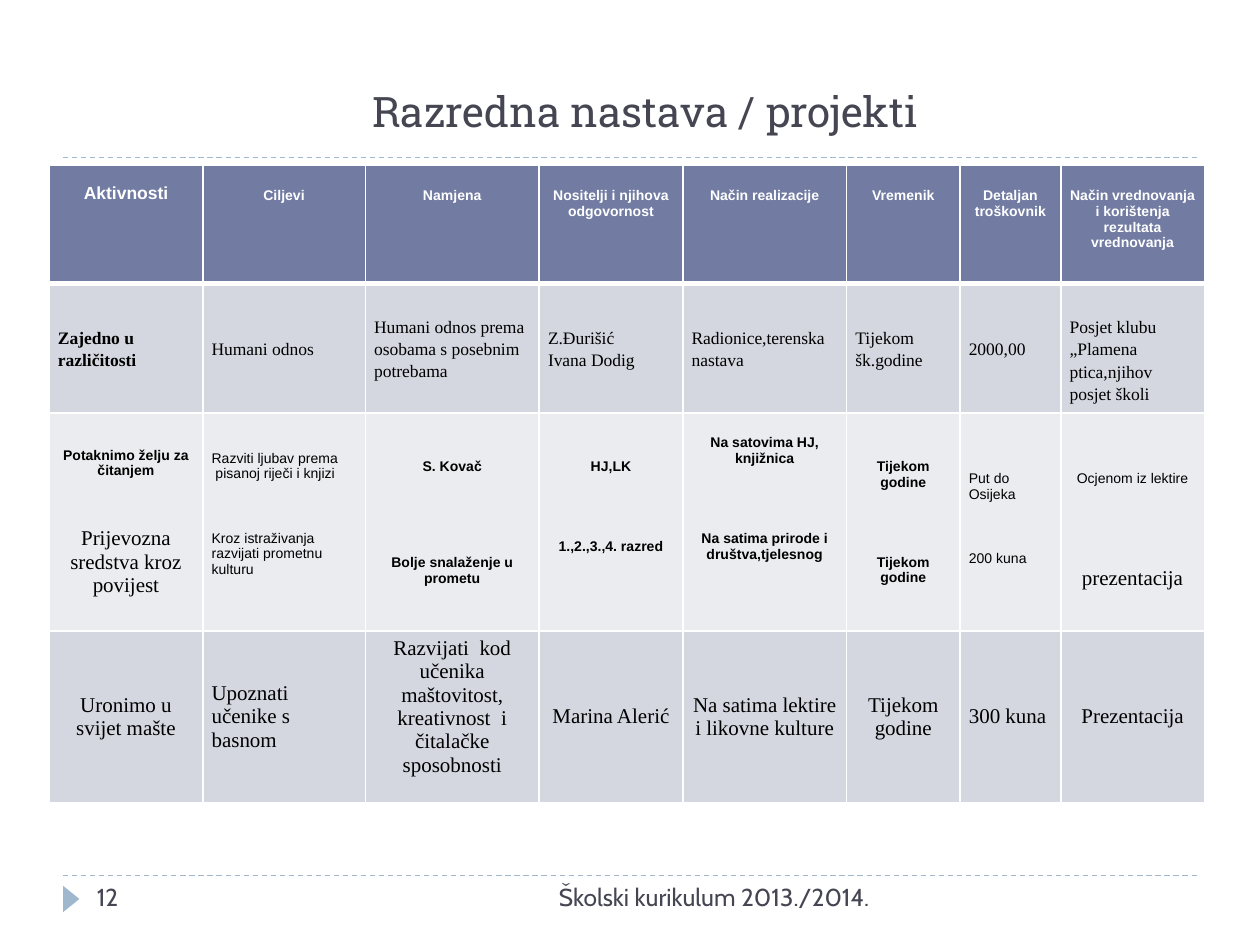
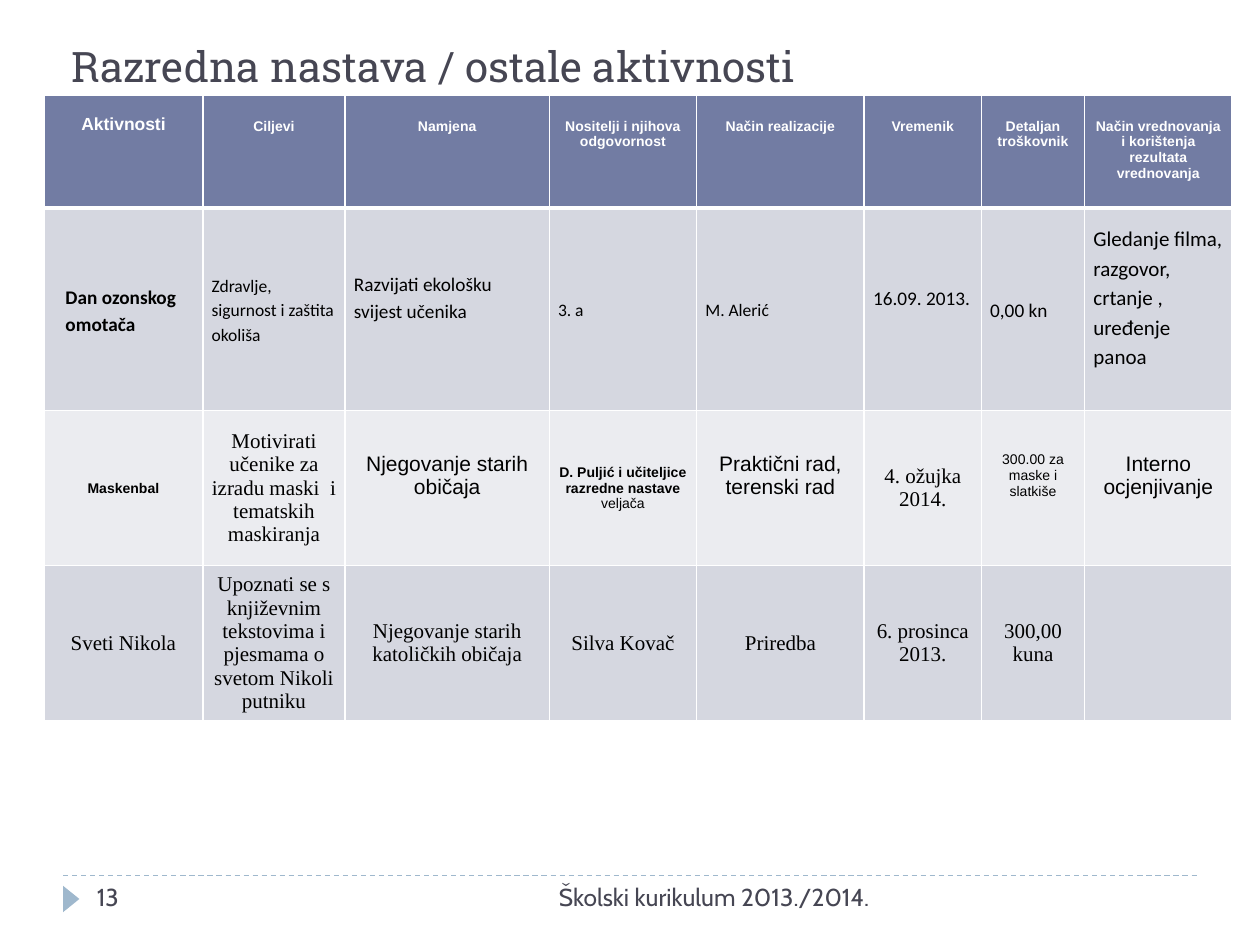
from lxml.etree import SubElement
from pptx import Presentation
from pptx.dml.color import RGBColor
from pptx.enum.dml import MSO_LINE
from pptx.enum.shapes import MSO_CONNECTOR, MSO_SHAPE
from pptx.enum.text import MSO_ANCHOR as ANCHOR, PP_ALIGN as ALIGN
from pptx.oxml.ns import qn
from pptx.util import Inches, Pt

INK, ACCENT, HEADER, WHITE, BLACK = "464653", "9FB8CD", "727CA3", "FFFFFF", "000000"
BANDS = ["D5D7E0", "EBECF0"]
FOOTER = "Školski kurikulum 2013./2014."
SANS, SERIF, BODY = "Arial", "Times New Roman", "Calibri"
BLANK_LINE = 9.2

RUN_KEYS = {"name", "size", "bold"}
PARA_KEYS = {"alignment", "line_spacing", "space_before"}
CELL_KEYS = {"margin_left", "margin_right", "margin_top", "margin_bottom", "vertical_anchor"}

CENTER, LEFT = {"alignment": ALIGN.CENTER}, {"alignment": ALIGN.LEFT}
SMALL = {"name": SANS, "size": Pt(8), "bold": False}
SMALL_BOLD = {**SMALL, "bold": True}
LARGE = {"name": SERIF, "size": Pt(12), "bold": False}
LARGE_SANS = {**LARGE, "name": SANS}
SPACED = {**LEFT, "line_spacing": 1.15, "bold": False}
SERIF_ROW = {**SPACED, "name": SERIF, "size": Pt(10)}
BODY_ROW = {**SPACED, "name": BODY, "size": Pt(11)}
BODY_SMALL = {"size": Pt(10)}
CELL_BASE = {
    "margin_left": Inches(0.07), "margin_right": Inches(0.07),
    "margin_top": 0, "margin_bottom": 0, "vertical_anchor": ANCHOR.MIDDLE,
}


def color(value):
    return RGBColor.from_string(value)


def apply(target, values, keys):
    for key in keys & values.keys():
        setattr(target, key, values[key])


def raised(inches):
    return {"margin_bottom": Inches(inches)}


def lowered(inches):
    return {"margin_top": Inches(inches)}


def after_blank(lines):
    return {"space_before": Pt(round(lines * BLANK_LINE, 1))}


def cell(*lines, **fmt):
    return lines, fmt


def write_line(p, text, fmt, ink):
    apply(p, fmt, PARA_KEYS)
    r = p.add_run()
    r.text = text
    apply(r.font, fmt, RUN_KEYS)
    r.font.color.rgb = color(ink)


def add_text(s, text, box, fmt, anchor=ANCHOR.TOP):
    tf = s.shapes.add_textbox(*map(Inches, box)).text_frame
    tf.word_wrap = True
    tf.vertical_anchor = anchor
    write_line(tf.paragraphs[0], text, fmt, INK)


def add_rule(s, y):
    line = s.shapes.add_connector(
        MSO_CONNECTOR.STRAIGHT, Inches(0.5), Inches(y), Inches(9.5), Inches(y))
    line.line.color.rgb = color(ACCENT)
    line.line.width = Pt(0.75)
    line.line.dash_style = MSO_LINE.DASH
    SubElement(line._element.spPr, qn("a:effectLst"))


def add_marker(s):
    sp = s.shapes.add_shape(
        MSO_SHAPE.ISOSCELES_TRIANGLE, Inches(0.46), Inches(7.07), Inches(0.21), Inches(0.13))
    sp.rotation = 90
    sp.shadow.inherit = False
    sp.fill.solid()
    sp.fill.fore_color.rgb = color(ACCENT)
    sp.line.fill.background()


def add_footer(s, number):
    fmt = {"name": "Cabin", "size": Pt(14)}
    add_rule(s, 6.95)
    add_marker(s)
    add_text(s, FOOTER, (3.17, 6.95, 3.83, 0.4), {**fmt, "alignment": ALIGN.RIGHT})
    add_text(s, str(number), (0.67, 6.95, 2.17, 0.4), fmt)


def add_title(s, text, left, top, alignment):
    fmt = {"name": "Roboto Slab", "size": Pt(24), "alignment": alignment}
    add_text(s, text, (left, top, 9.22, 0.61), fmt, ANCHOR.BOTTOM)


def set_borders(tc, top, bottom):
    props = tc._tc.get_or_add_tcPr()
    for side, width in zip("LRTB", (1, 1, top, bottom)):
        ln = SubElement(props, qn(f"a:ln{side}"), w=str(Pt(width)))
        fill = SubElement(ln, qn("a:solidFill"))
        SubElement(fill, qn("a:srgbClr"), val=WHITE)


def fill_cell(tc, row, content, row_fmt):
    lines, own_fmt = content
    fmt = {**CELL_BASE, **row_fmt, **own_fmt}
    set_borders(tc, 3 if row == 1 else 1, 3 if row == 0 else 1)
    tc.fill.solid()
    tc.fill.fore_color.rgb = color(BANDS[(row - 1) % 2] if row else HEADER)
    apply(tc, fmt, CELL_KEYS)
    tf = tc.text_frame
    for i, line in enumerate(lines):
        text, line_fmt = (line, {}) if isinstance(line, str) else line
        p = tf.add_paragraph() if i else tf.paragraphs[0]
        write_line(p, text, {**fmt, **line_fmt}, BLACK if row else WHITE)


def add_activity_table(s, left, top, widths, rows):
    shape = s.shapes.add_table(
        len(rows), len(widths), Inches(left), Inches(top),
        Inches(sum(widths)), Inches(sum(height for height, _, _ in rows)))
    table = shape.table
    table.horz_banding = False
    for column, width in zip(table.columns, widths):
        column.width = Inches(width)
    for i, (height, row_fmt, cells) in enumerate(rows):
        table.rows[i].height = Inches(height)
        for j, content in enumerate(cells):
            fill_cell(table.cell(i, j), i, content, row_fmt)


def header_row(height):
    fmt = {**CENTER, **SMALL_BOLD, **lowered(0.18), "vertical_anchor": ANCHOR.TOP}
    labels = [
        "Ciljevi", "Namjena", "Nositelji i njihova odgovornost", "Način realizacije",
        "Vremenik", "Detaljan troškovnik",
        "Način vrednovanja i korištenja rezultata vrednovanja",
    ]
    first = cell("Aktivnosti", size=Pt(10), **lowered(0.15))
    return height, fmt, [first] + [cell(label) for label in labels]


PROJECTS = [
    header_row(0.94),
    (1.03, SERIF_ROW, [
        cell("Zajedno u različitosti", bold=True),
        cell("Humani odnos"),
        cell("Humani odnos prema osobama s posebnim potrebama"),
        cell("Z.Đurišić", "Ivana Dodig"),
        cell("Radionice,terenska nastava"),
        cell("Tijekom šk.godine"),
        cell("2000,00"),
        cell("Posjet klubu „Plamena ptica,njihov posjet školi", **lowered(0.18)),
    ]),
    (1.73, {**CENTER, **SMALL_BOLD}, [
        cell("Potaknimo želju za čitanjem",
             ("Prijevozna sredstva kroz povijest", {**LARGE, **after_blank(3)})),
        cell("Razviti ljubav prema", " pisanoj riječi i knjizi",
             ("Kroz istraživanja razvijati prometnu kulturu", after_blank(3)),
             **LEFT, **SMALL, **raised(0.13)),
        cell("S. Kovač", ("Bolje snalaženje u prometu", after_blank(5))),
        cell("HJ,LK", ("1.,2.,3.,4. razred", after_blank(4)), **raised(0.25)),
        cell("Na satovima HJ, knjižnica",
             ("Na satima prirode i društva,tjelesnog", after_blank(4)), **raised(0.38)),
        cell("Tijekom godine", ("Tijekom godine", after_blank(4))),
        cell("Put do Osijeka", ("200 kuna", after_blank(3)),
             **LEFT, **SMALL, **raised(0.06)),
        cell("Ocjenom iz lektire", ("prezentacija", {**LARGE, **after_blank(5)}),
             **SMALL, **lowered(0.13)),
    ]),
    (1.28, {**CENTER, **LARGE}, [
        cell("Uronimo u svijet mašte"),
        cell("Upoznati učenike s basnom", **LEFT),
        cell("Razvijati  kod učenika maštovitost, kreativnost  i čitalačke sposobnosti",
             **raised(0.16)),
        cell("Marina Alerić"),
        cell("Na satima lektire i likovne kulture"),
        cell("Tijekom godine"),
        cell("300 kuna", **LEFT),
        cell("Prezentacija"),
    ]),
]

OTHER_ACTIVITIES = [
    header_row(0.89),
    (1.61, BODY_ROW, [
        cell("Dan ozonskog omotača", bold=True, margin_left=Inches(0.17)),
        cell("Zdravlje, sigurnost i zaštita okoliša", **BODY_SMALL),
        cell("Razvijati ekološku svijest učenika", **raised(0.2)),
        cell("3. a", **BODY_SMALL),
        cell("M. Alerić", **BODY_SMALL),
        cell("16.09. 2013.", **raised(0.2)),
        cell("0,00 kn"),
        cell("Gledanje filma, razgovor, crtanje , uređenje panoa",
             size=Pt(12), **raised(0.2)),
    ]),
    (1.23, {**CENTER, **LARGE}, [
        cell("Maskenbal", **SMALL_BOLD),
        cell("Motivirati učenike za izradu maski  i tematskih maskiranja"),
        cell("Njegovanje starih običaja", **LARGE_SANS, **raised(0.2)),
        cell("D. Puljić i učiteljice razredne nastave", ("veljača", SMALL), **SMALL_BOLD),
        cell("Praktični rad, terenski rad", **LARGE_SANS, **raised(0.2)),
        cell("4. ožujka 2014."),
        cell("300.00 za maske i slatkiše", **SMALL, **raised(0.2)),
        cell("Interno ocjenjivanje", **LARGE_SANS, **raised(0.2)),
    ]),
    (1.23, {**CENTER, **LARGE}, [
        cell("Sveti Nikola"),
        cell("Upoznati se s književnim tekstovima i pjesmama o svetom Nikoli putniku"),
        cell("Njegovanje starih katoličkih običaja"),
        cell("Silva Kovač"),
        cell("Priredba"),
        cell("6. prosinca 2013."),
        cell("300,00 kuna"),
        cell(),
    ]),
]


def add_slide(prs, number):
    s = prs.slides.add_slide(prs.slide_layouts[6])
    add_footer(s, number)
    return s


def main():
    prs = Presentation()
    prs.slide_width, prs.slide_height = Inches(10), Inches(7.5)

    s = add_slide(prs, 12)
    add_rule(s, 1.25)
    add_title(s, "Razredna nastava / projekti", 0.51, 0.52, ALIGN.CENTER)
    add_activity_table(
        s, 0.39, 1.31, [1.22, 1.29, 1.38, 1.14, 1.3, 0.9, 0.8, 1.14], PROJECTS)

    s = add_slide(prs, 13)
    add_title(s, "Razredna nastava / ostale aktivnosti", 0.47, 0.16, ALIGN.LEFT)
    add_activity_table(
        s, 0.35, 0.76, [1.26, 1.13, 1.62, 1.17, 1.33, 0.93, 0.82, 1.17], OTHER_ACTIVITIES)

    prs.save("out.pptx")


if __name__ == "__main__":
    main()
